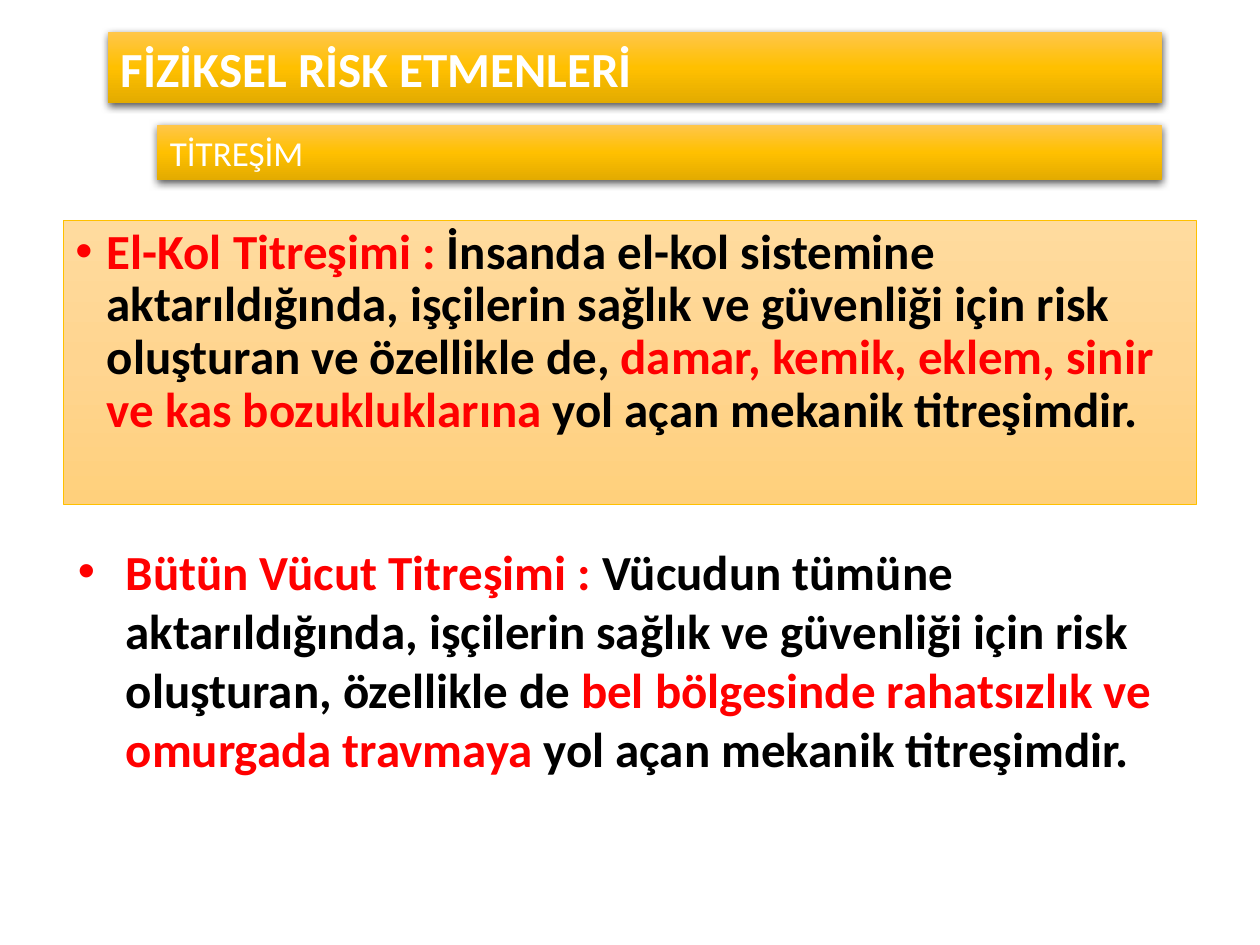
from copy import deepcopy
from dataclasses import dataclass

from lxml.etree import SubElement
from pptx import Presentation
from pptx.dml.color import RGBColor
from pptx.enum.shapes import MSO_SHAPE
from pptx.enum.text import MSO_ANCHOR, MSO_AUTO_SIZE, PP_ALIGN
from pptx.oxml.ns import qn
from pptx.util import Emu, Inches, Pt


@dataclass(frozen=True)
class Theme:
    font: str = "Calibri"
    large: int = 28
    small: int = 20
    white: str = "FFFFFF"
    text: str = "000000"
    accent: str = "FF0000"
    border: str = "FFC000"
    shadow: str = "000000"
    bar: tuple = ("FFC64B", "FFC000", "E3AB00")
    panel: tuple = ("FFDB9E", "FFD590", "FFD07C")


THEME = Theme()
WIDTH, HEIGHT = 10, 7.5
BAR_RIGHT = 9.22

TITLE = "FİZİKSEL RİSK ETMENLERİ"
SUBTITLE = "TİTREŞİM"
HAND_ARM = [
    ("El-Kol Titreşimi : ", THEME.accent),
    ("İnsanda el-kol sistemine aktarıldığında, işçilerin sağlık ve güvenliği "
     "için risk oluşturan ve özellikle de, ", THEME.text),
    ("damar, kemik, eklem, sinir ve kas bozukluklarına", THEME.accent),
    (" yol açan mekanik titreşimdir.", THEME.text),
]
WHOLE_BODY = [
    ("Bütün Vücut Titreşimi : ", THEME.accent),
    ("Vücudun tümüne aktarıldığında, işçilerin sağlık ve güvenliği için risk "
     "oluşturan, özellikle de ", THEME.text),
    ("bel bölgesinde rahatsızlık ve omurgada travmaya ", THEME.accent),
    ("yol açan mekanik titreşimdir.", THEME.text),
]


def place(shape, left, top, width, height):
    shape.left, shape.top = Inches(left), Inches(top)
    shape.width, shape.height = Inches(width), Inches(height)


def fill_downward(shape, colors):
    """Fill with evenly spaced colours from top to bottom."""
    fill = shape.fill
    fill.gradient()
    stop_list = shape.element.spPr.find(qn("a:gradFill")).find(qn("a:gsLst"))
    while len(stop_list) < len(colors):
        stop_list.append(deepcopy(stop_list[-1]))
    for index, (stop, color) in enumerate(zip(fill.gradient_stops, colors)):
        stop.position = index / (len(colors) - 1)
        stop.color.rgb = RGBColor.from_string(color)
    fill.gradient_angle = 270


def add_drop_shadow(shape):
    shape.shadow.inherit = False
    effects = shape.element.spPr.find(qn("a:effectLst"))
    shadow = SubElement(effects, qn("a:outerShdw"), blurRad=str(Pt(4.5)),
                        dist=str(Pt(1.5)), dir="5400000", rotWithShape="0")
    color = SubElement(shadow, qn("a:srgbClr"), val=THEME.shadow)
    SubElement(color, qn("a:alpha"), val="63000")


def write(shape, runs, size, bold, anchor):
    """Write coloured runs as one left-aligned paragraph and return it."""
    frame = shape.text_frame
    frame.word_wrap = True
    frame.auto_size = MSO_AUTO_SIZE.NONE
    frame.vertical_anchor = anchor
    paragraph = frame.paragraphs[0]
    paragraph.alignment = PP_ALIGN.LEFT
    for text, color in runs:
        run = paragraph.add_run()
        run.text = text
        run.font.name = THEME.font
        run.font.size = Pt(size)
        run.font.bold = bold
        run.font.color.rgb = RGBColor.from_string(color)
    return paragraph


def format_bar(shape, text, left, top, height, size, bold):
    place(shape, left, top, BAR_RIGHT - left, height)
    fill_downward(shape, THEME.bar)
    shape.line.fill.background()
    add_drop_shadow(shape)
    write(shape, [(text, THEME.white)], size, bold, MSO_ANCHOR.MIDDLE)


def write_bullet(shape, runs, indent, space_before, line_spacing):
    paragraph = write(shape, runs, THEME.large, True, MSO_ANCHOR.TOP)
    paragraph.space_before = Pt(space_before)
    paragraph.line_spacing = line_spacing
    properties = paragraph._p.get_or_add_pPr()
    properties.set("marL", str(Inches(indent)))
    properties.set("indent", str(Emu(-Inches(indent))))
    SubElement(properties, qn("a:buFont"), typeface="Arial")
    SubElement(properties, qn("a:buChar"), char="•")


def main():
    presentation = Presentation()
    presentation.slide_width = Inches(WIDTH)
    presentation.slide_height = Inches(HEIGHT)
    slide = presentation.slides.add_slide(presentation.slide_layouts[5])
    shapes = slide.shapes

    format_bar(shapes.title, TITLE, 0.86, 0.25, 0.57, THEME.large, True)
    subtitle = shapes.add_shape(MSO_SHAPE.RECTANGLE, 0, 0, 0, 0)
    format_bar(subtitle, SUBTITLE, 1.25, 0.99, 0.44, THEME.small, False)

    panel = shapes.add_shape(MSO_SHAPE.RECTANGLE, 0, 0, 0, 0)
    place(panel, 0.5, 1.75, 9, 2.25)
    fill_downward(panel, THEME.panel)
    panel.line.color.rgb = RGBColor.from_string(THEME.border)
    panel.line.width = Pt(0.5)
    panel.shadow.inherit = False
    write_bullet(panel, HAND_ARM, 0.25, 10, 0.9)

    definition = shapes.add_textbox(0, 0, 0, 0)
    place(definition, 0.52, 4.25, 9, 2.33)
    write_bullet(definition, WHOLE_BODY, 0.38, 0.2 * THEME.large, 1.0)

    presentation.save("out.pptx")


if __name__ == "__main__":
    main()
